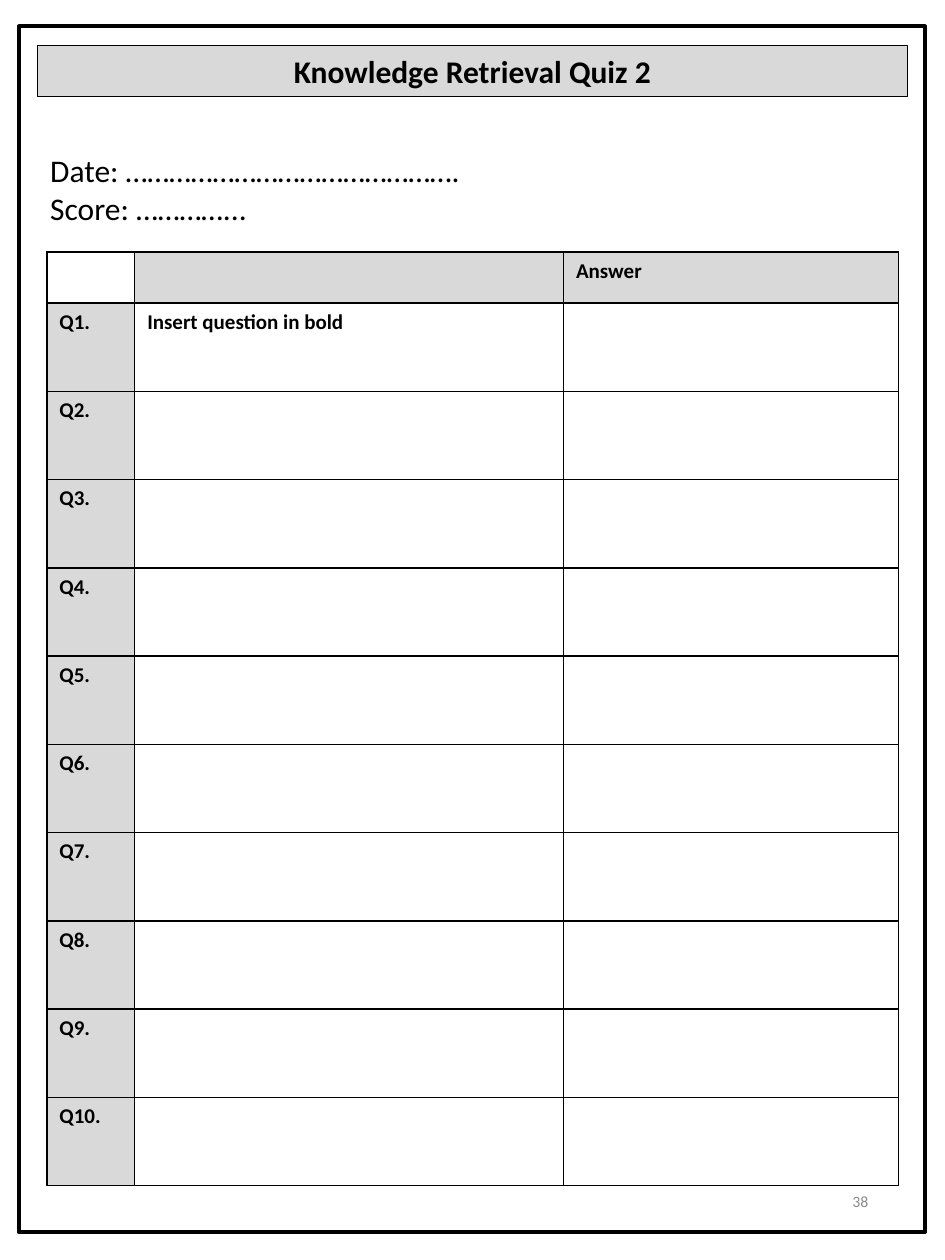
from lxml.etree import SubElement
from pptx import Presentation
from pptx.dml.color import RGBColor
from pptx.enum.shapes import MSO_SHAPE as Shape
from pptx.enum.text import MSO_ANCHOR as Anchor, MSO_AUTO_SIZE as AutoSize, PP_ALIGN as Align
from pptx.oxml.ns import qn
from pptx.util import Pt

BLACK = RGBColor(0x00, 0x00, 0x00)
WHITE = RGBColor(0xFF, 0xFF, 0xFF)
SHADE = RGBColor(0xD9, 0xD9, 0xD9)
PAGE_GREY = RGBColor(0x8C, 0x8C, 0x8C)
FONT = "Calibri"
QUESTION_COUNT = 10


def format_text(frame, size, color=BLACK, bold=False, align=Align.LEFT):
    for paragraph in frame.paragraphs:
        paragraph.alignment = align
        for run in paragraph.runs:
            run.font.name = FONT
            run.font.size = Pt(size)
            run.font.bold = bold
            run.font.color.rgb = color


def paint(part, color):
    part.fill.solid()
    part.fill.fore_color.rgb = color


def outline(shape, width):
    shape.line.color.rgb = BLACK
    shape.line.width = Pt(width)


def add_frame(slide, left, top, width, height):
    frame = slide.shapes.add_shape(Shape.RECTANGLE, Pt(left), Pt(top), Pt(width), Pt(height))
    frame.shadow.inherit = False
    frame.fill.background()
    outline(frame, 2.25)


def set_title(slide, text, left, top, width, height):
    title = slide.shapes.title
    title.left, title.top, title.width, title.height = Pt(left), Pt(top), Pt(width), Pt(height)
    paint(title, SHADE)
    outline(title, 0.75)
    title.text_frame.text = text
    title.text_frame.auto_size = AutoSize.NONE
    title.text_frame.vertical_anchor = Anchor.MIDDLE
    format_text(title.text_frame, 18, bold=True, align=Align.CENTER)


def add_text(slide, text, left, top, width, height, size, anchor=Anchor.TOP, **style):
    box = slide.shapes.add_textbox(Pt(left), Pt(top), Pt(width), Pt(height))
    box.text_frame.word_wrap = True
    box.text_frame.vertical_anchor = anchor
    box.text_frame.text = text
    format_text(box.text_frame, size, **style)


def add_borders(cell, width):
    properties = cell._tc.get_or_add_tcPr()
    for side in ("a:lnL", "a:lnR", "a:lnT", "a:lnB"):
        border = SubElement(properties, qn(side), w=str(Pt(width)))
        fill = SubElement(border, qn("a:solidFill"))
        SubElement(fill, qn("a:srgbClr"), val=str(BLACK))


def add_quiz_table(slide, rows, left, top, widths, heights):
    table = slide.shapes.add_table(len(rows), len(widths), Pt(left), Pt(top),
                                   Pt(sum(widths)), Pt(sum(heights))).table
    table.first_row = table.horz_banding = False
    for column, width in zip(table.columns, widths):
        column.width = Pt(width)
    for row, height in zip(table.rows, heights):
        row.height = Pt(height)
    for r, texts in enumerate(rows):
        for c, text in enumerate(texts):
            cell = table.cell(r, c)
            add_borders(cell, 1)
            # Headings run along the top row or the first column, not the corner
            is_heading = (r == 0) != (c == 0)
            paint(cell, SHADE if is_heading else WHITE)
            cell.text_frame.text = text
            format_text(cell.text_frame, 12, bold=True)


def main():
    prs = Presentation()
    prs.slide_width, prs.slide_height = Pt(540), Pt(720)
    slide = prs.slides.add_slide(prs.slide_layouts[5])

    # Page frame and heading
    add_frame(slide, 10.8, 15.1, 517.7, 689)
    set_title(slide, "Knowledge Retrieval Quiz 2", 21.6, 25.9, 496.8, 29.1)

    # Lines for the date and the score
    add_text(slide, "Date: ……………………………………….\nScore: …………...", 21.6, 82.8, 370.8, 51, 18)

    # Question and answer grid
    rows = [["", "", "Answer"]]
    rows += [[f"Q{number}.", "", ""] for number in range(1, QUESTION_COUNT + 1)]
    rows[1][1] = "Insert question in bold"
    add_quiz_table(slide, rows, 26.8, 144, [50.2, 245, 191.4], [29.2] + [50.44] * QUESTION_COUNT)

    # Page number
    add_text(slide, "38", 381.6, 667.5, 121.7, 38.2, 9, anchor=Anchor.MIDDLE,
             color=PAGE_GREY, align=Align.RIGHT)

    prs.save("out.pptx")


if __name__ == "__main__":
    main()
